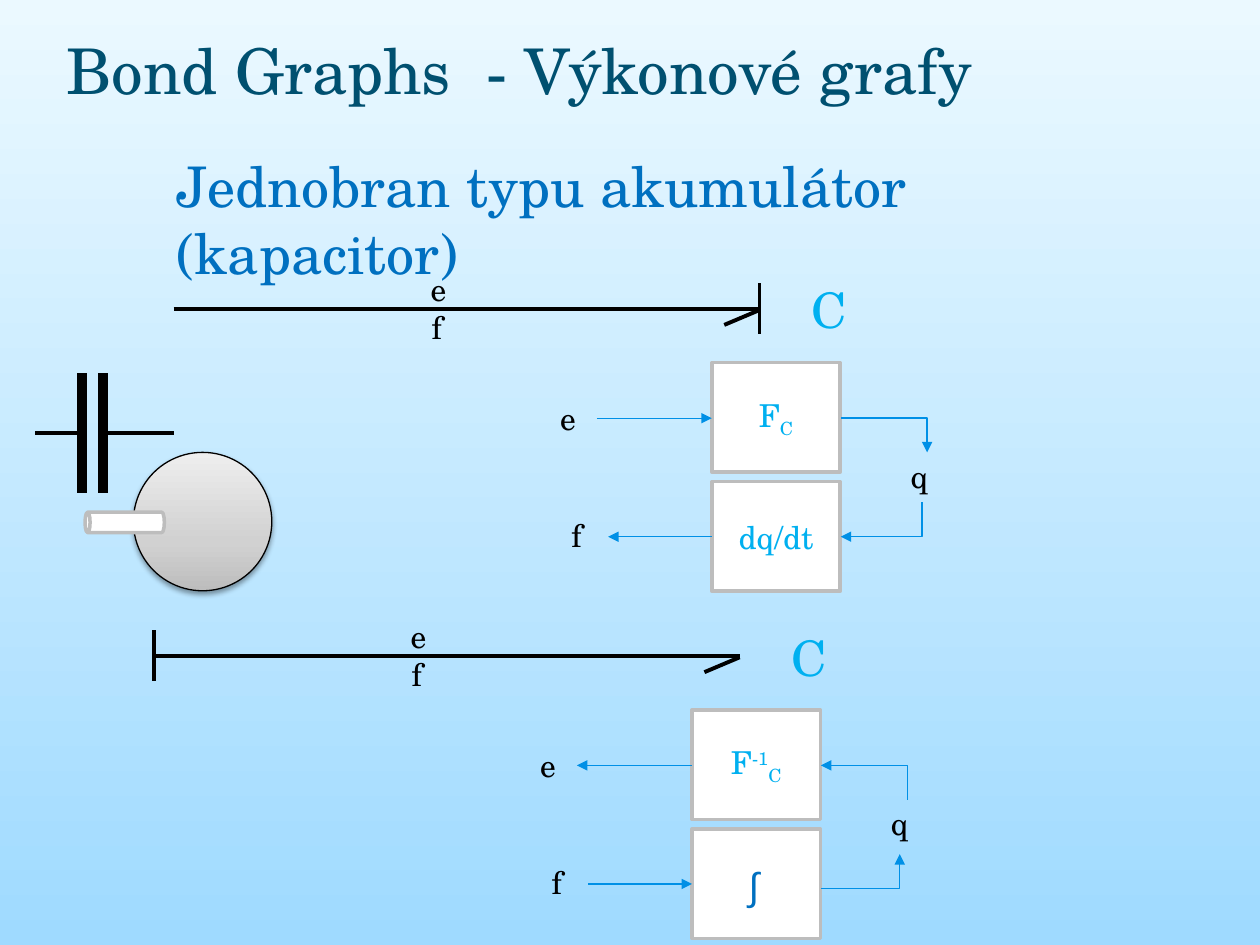
from copy import deepcopy

from lxml import etree
from pptx import Presentation
from pptx.dml.color import RGBColor
from pptx.enum import shapes, text
from pptx.oxml import ns
from pptx.util import Cm, Pt

BLACK = RGBColor(0x00, 0x00, 0x00)
WHITE = RGBColor(0xFF, 0xFF, 0xFF)
GREY = RGBColor(0xBD, 0xBD, 0xBD)
MID_GREY = RGBColor(0xD1, 0xD1, 0xD1)
PALE_GREY = RGBColor(0xEE, 0xEE, 0xEE)
TITLE = RGBColor(0x00, 0x50, 0x70)
BLUE = RGBColor(0x00, 0x70, 0xC0)
CYAN = RGBColor(0x00, 0xB0, 0xF0)
ARROW = RGBColor(0x00, 0x90, 0xE6)
SKY_TOP = RGBColor(0xEB, 0xF9, 0xFF)
SKY_BOTTOM = RGBColor(0x9F, 0xDA, 0xFF)
FONT = "TeX Gyre Schola"


def write(sp, runs, size=18, color=BLACK, font=FONT, align=text.PP_ALIGN.LEFT,
          anchor=text.MSO_ANCHOR.TOP, inset=None):
    tf = sp.text_frame
    tf.word_wrap = True
    tf.vertical_anchor = anchor
    if inset is not None:
        tf.margin_left = tf.margin_right = Cm(inset)
        tf.margin_top = tf.margin_bottom = Cm(inset)
    p = tf.paragraphs[0]
    p.alignment = align
    for content, baseline in [(runs, 0)] if isinstance(runs, str) else runs:
        r = p.add_run()
        r.text = content
        r.font.size = Pt(size)
        r.font.name = font
        r.font.color.rgb = color
        if baseline:
            r.font._element.set("baseline", str(baseline * 1000))


def add_text(sl, x, y, w, h, runs, **fmt):
    write(sl.shapes.add_textbox(Cm(x), Cm(y), Cm(w), Cm(h)), runs, **fmt)


def add_line(sl, x1, y1, x2, y2, color=BLACK, width=2.25, end=None, bent=False):
    cn = sl.shapes.add_connector(shapes.MSO_CONNECTOR.STRAIGHT,
                                 Cm(x1), Cm(y1), Cm(x2), Cm(y2))
    cn.line.color.rgb = color
    cn.line.width = Pt(width)
    spPr = cn._element.spPr
    if bent:
        spPr.find(ns.qn("a:prstGeom")).set("prst", "bentConnector2")
    if end:
        etree.SubElement(cn.line._get_or_add_ln(), ns.qn(f"a:{end}End"), type="triangle")
    etree.SubElement(spPr, ns.qn("a:effectLst"))


def add_solid(sl, kind, x, y, w, h, line=GREY, width=2):
    sp = sl.shapes.add_shape(kind, Cm(x), Cm(y), Cm(w), Cm(h))
    sp.fill.solid()
    sp.fill.fore_color.rgb = WHITE
    sp.line.color.rgb = line
    sp.line.width = Pt(width)
    sp.shadow.inherit = False
    return sp


def set_gradient(fill, angle, stops):
    fill.gradient()
    fill.gradient_angle = angle
    gs_list = fill.gradient_stops[0]._gs.getparent()
    while len(gs_list) < len(stops):
        gs_list.append(deepcopy(gs_list[-1]))
    for stop, (position, color) in zip(fill.gradient_stops, stops):
        stop.position = position
        stop.color.rgb = color


def header(sl, x, y):
    add_text(sl, x, y, 22.83, 2.79, "Bond Graphs  - Výkonové grafy", size=36,
             color=TITLE, anchor=text.MSO_ANCHOR.MIDDLE)
    add_text(sl, x + 2.21, y + 2.92, 20.5, 1.63, "Jednobran typu akumulátor (kapacitor)",
             size=32, color=BLUE)


def bond_diagram(sl, x, y, boxes, stroke_x, ends, q_x, low_y):
    centred = dict(color=CYAN, align=text.PP_ALIGN.CENTER, anchor=text.MSO_ANCHOR.MIDDLE)
    add_line(sl, x, y, x + 11.81, y)
    add_line(sl, x + 11.81, y + 0.03, x + 11.1, y + 0.33)
    add_line(sl, x + stroke_x, y - 0.51, x + stroke_x, y + 0.51)
    add_text(sl, x + 12.04, y - 1.09, 2.36, 2.21, "C", size=28, **centred)

    for label, dx, dy in [("e", 4.93, -0.91), ("f", 4.95, -0.13), ("e", 7.54, 1.7),
                          ("f", 7.77, 4.06), ("q", 14.61, 2.87)]:
        add_text(sl, x + dx, y + dy, 1.1, 1.02, label)

    for row, runs in enumerate(boxes):
        sp = add_solid(sl, shapes.MSO_SHAPE.RECTANGLE, x + 10.85, y + 1.09 + row * 2.4,
                       2.59, 2.21)
        if runs:
            write(sp, runs, **centred)

    e_end, f_end, top_end, low_end = ends
    blue = dict(color=ARROW, width=0.75)
    add_line(sl, x + 8.53, y + 2.21, x + 10.85, y + 2.21, end=e_end, **blue)
    add_line(sl, x + 8.76, y + 4.6, x + 10.85, y + 4.6, end=f_end, **blue)
    add_line(sl, x + 13.45, y + 2.21, x + 15.19, y + 2.9, end=top_end, bent=True, **blue)
    add_line(sl, x + 13.45, y + low_y, x + q_x, y + low_y - 0.7, end=low_end, bent=True,
             **blue)


def capacitor(sl, x, y):
    for dx in (0.94, 1.37):
        add_line(sl, x + dx, y + 2.41, x + dx, y, width=6)
    add_line(sl, x + 0.94, y + 1.21, x, y + 1.21)
    add_line(sl, x + 2.79, y + 1.21, x + 1.4, y + 1.21)


def tank(sl, x, y):
    ball = add_solid(sl, shapes.MSO_SHAPE.OVAL, x + 1, y, 2.79, 2.79, line=BLACK, width=0.75)
    set_gradient(ball.fill, 90, [(0, GREY), (0.35, MID_GREY), (1, PALE_GREY)])
    effects = ball._element.spPr.find(ns.qn("a:effectLst"))
    shadow = etree.SubElement(effects, ns.qn("a:outerShdw"), blurRad=str(Pt(3.1)),
                              dist=str(Pt(1.6)), dir="5400000", rotWithShape="0")
    clr = etree.SubElement(shadow, ns.qn("a:srgbClr"), val=str(BLACK))
    etree.SubElement(clr, ns.qn("a:alpha"), val="38000")
    pipe = add_solid(sl, shapes.MSO_SHAPE.CAN, x + 0.62, y + 0.61, 0.41, 1.6)
    pipe.rotation = 270


def main():
    prs = Presentation()
    prs.slide_width, prs.slide_height = Cm(25.4), Cm(19.05)
    sl = prs.slides.add_slide(prs.slide_layouts[6])
    set_gradient(sl.background.fill, 270, [(0, SKY_TOP), (1, SKY_BOTTOM)])
    header(sl, 1.09, 0)
    bond_diagram(sl, 3.5, 6.22, [[("F", 0), ("C", -25)], "dq/dt"], 11.81,
                 ("tail", "head", "tail", "head"), 15.09, 4.6)
    bond_diagram(sl, 3.1, 13.22, [[("F", 0), ("-1", 30), ("C", -25)], None], 0,
                 ("head", "tail", "head", "tail"), 15.04, 4.7)
    add_text(sl, 15.09, 17.37, 0.41, 0.94, "∫", size=22, color=BLUE, font="Arial", inset=0)
    capacitor(sl, 0.71, 7.52)
    tank(sl, 1.69, 9.12)
    prs.save("out.pptx")


if __name__ == "__main__":
    main()
